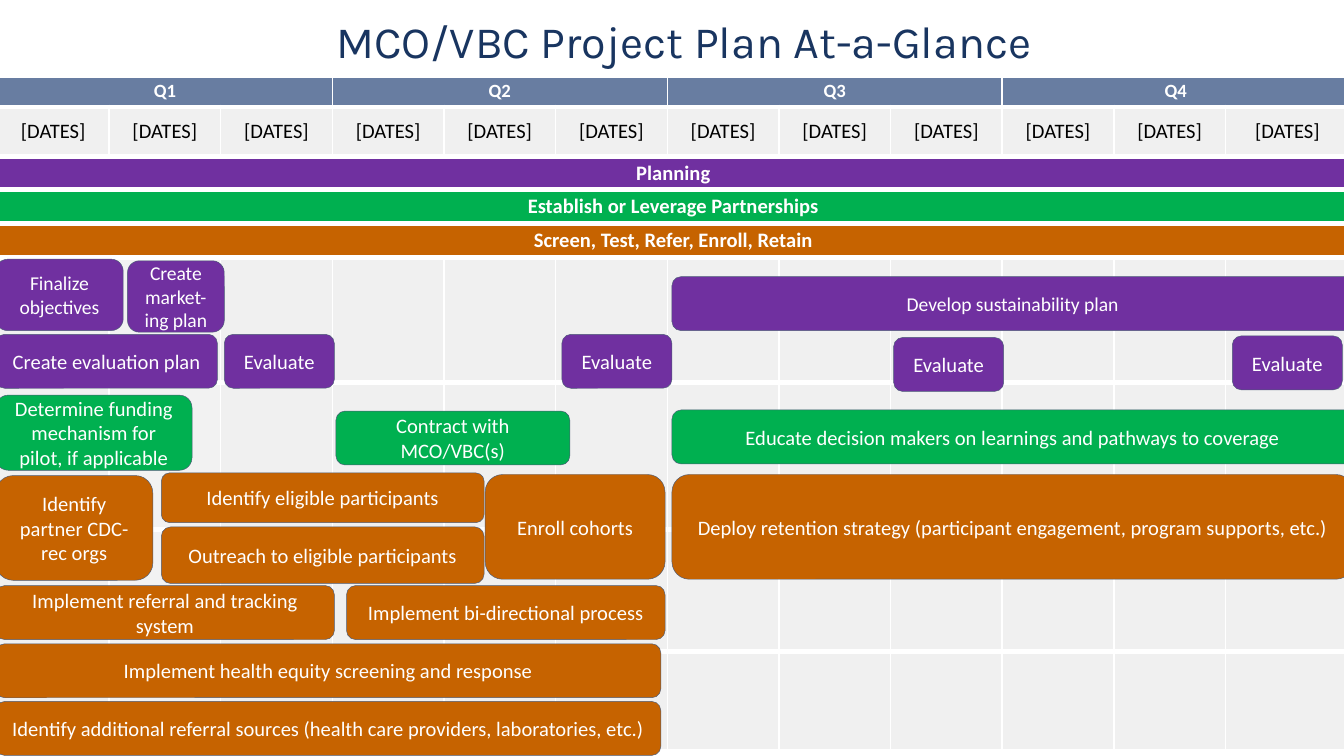
from lxml import etree
from pptx import Presentation
from pptx.dml.color import RGBColor
from pptx.enum import shapes, text
from pptx.oxml import ns
from pptx.util import Cm, Pt

COLORS = {
    "title": "193560", "quarter": "687DA1", "month": "F0F0F0", "second_month": "F2F2F2",
    "outline": "4D5C77", "white": "FFFFFF", "black": "000000",
    "planning": "7030A0", "partnerships": "00B050", "enrollment": "C66300",
}
TITLE = "MCO/VBC Project Plan At-a-Glance"
QUARTERS = ["Q1", "Q2", "Q3", "Q4"]
MONTHS = ["[DATES]"] * 12
PHASES = [
    ("planning", "Planning"),
    ("partnerships", "Establish or Leverage Partnerships"),
    ("enrollment", "Screen, Test, Refer, Enroll, Retain"),
]
START, SECOND_HALF = -0.08, 12.7
HALF_YEAR, EVALUATION, BAR = 12.88, 2.08, 1.02
TASKS = {
    "planning": [
        ("Finalize objectives", START, 4.9, 2.41, 1.35, 10.5),
        ("Create market-\ving plan", 2.41, 4.93, 1.83, 1.35, 10.5),
        ("Develop sustainability plan", SECOND_HALF, 5.23, HALF_YEAR, BAR, 10.5),
        ("Create evaluation plan", START, 6.32, 4.19, BAR, 11),
        ("Evaluate", 4.24, 6.32, EVALUATION, BAR, 11),
        ("Evaluate", 10.62, 6.32, EVALUATION, BAR, 11),
        ("Evaluate", 16.89, 6.38, EVALUATION, BAR, 11),
        ("Evaluate", 23.29, 6.35, EVALUATION, BAR, 11),
    ],
    "partnerships": [
        ("Determine funding mechanism for pilot, if applicable", START, 7.47, 3.71, 1.42, 11),
        ("Contract with MCO/VBC(s)", 6.35, 7.77, 4.42, BAR, 11),
        ("Educate decision makers on learnings and pathways to coverage",
         SECOND_HALF, 7.75, HALF_YEAR, BAR, 11),
    ],
    "enrollment": [
        ("Identify partner CDC-rec orgs", START, 8.99, 2.97, 1.98, 11),
        ("Identify eligible participants", 3.05, 8.94, 6.1, 0.94, 11),
        ("Outreach to eligible participants", 3.05, 9.96, 6.1, 1.07, 11),
        ("Enroll cohorts", 9.17, 8.97, 3.4, 1.98, 11),
        ("Deploy retention strategy (participant engagement, program supports, etc.)",
         SECOND_HALF, 8.97, HALF_YEAR, 1.98, 11),
        ("Implement referral and tracking system", START, 11.07, 6.4, BAR, 11),
        ("Implement bi-directional process", 6.55, 11.07, 6.02, BAR, 11),
        ("Implement health equity screening and response", START, 12.17, 12.57, BAR, 11),
        ("Identify additional referral sources (health care providers, laboratories, etc.)",
         START, 13.26, 12.57, BAR, 11),
    ],
}
MONTH_WIDTHS = [2.11] * 11 + [2.34]
HEADER_ROWS = [0.59, 0.93]
ROADMAP_ROWS = [0.64] * 3 + [2.36, 2.77, 2.31, 1.9]
TABLE_LEFT, HEADER_TOP, ROADMAP_TOP = -0.05, 1.43, 2.95


def rgb(name):
    return RGBColor.from_string(COLORS[name])


def write(frame, words, size, color, bold=False, font="Calibri", align=text.PP_ALIGN.CENTER):
    frame.text = words
    paragraph = frame.paragraphs[0]
    paragraph.alignment = align
    for run in paragraph.runs:
        run.font.name = font
        run.font.size = Pt(size)
        run.font.bold = bold
        run.font.color.rgb = rgb(color)
    return paragraph


def add_border(cell, side, width):
    edge = etree.SubElement(cell._tc.get_or_add_tcPr(), ns.qn(f"a:ln{side}"), w=str(Pt(width)))
    fill = etree.SubElement(edge, ns.qn("a:solidFill"))
    etree.SubElement(fill, ns.qn("a:srgbClr"), val=COLORS["white"])


def add_grid(slide, top, heights, rule):
    frame = slide.shapes.add_table(len(heights), len(MONTH_WIDTHS), Cm(TABLE_LEFT), Cm(top),
                                   Cm(sum(MONTH_WIDTHS)), Cm(sum(heights)))
    grid = frame.table
    grid.first_row = grid.horz_banding = False
    for column, width in zip(grid.columns, MONTH_WIDTHS):
        column.width = Cm(width)
    for row, height in zip(grid.rows, heights):
        row.height = Cm(height)
    for cell in grid.iter_cells():
        for side, width in zip("LRTB", (0.87, 0.87, rule, rule)):
            add_border(cell, side, width)
        cell.margin_left = cell.margin_right = Cm(0.15)
        cell.margin_top = cell.margin_bottom = Cm(0.08)
        cell.vertical_anchor = text.MSO_ANCHOR.MIDDLE
        cell.fill.solid()
        cell.fill.fore_color.rgb = rgb("month")
    return grid


def add_span(grid, row, first, last, words, size, color):
    cell = grid.cell(row, first)
    cell.merge(grid.cell(row, last))
    cell.fill.fore_color.rgb = rgb(color)
    write(cell.text_frame, words, size, "white", bold=True)


def add_roadmap(slide):
    grid = add_grid(slide, ROADMAP_TOP, ROADMAP_ROWS, 3)
    for row, (color, phase) in enumerate(PHASES):
        add_span(grid, row, 0, len(MONTHS) - 1, phase, 11, color)
    for row in range(len(PHASES), len(ROADMAP_ROWS)):
        grid.cell(row, 1).fill.fore_color.rgb = rgb("second_month")


def add_header(slide):
    grid = add_grid(slide, HEADER_TOP, HEADER_ROWS, 2.62)
    months_each = len(MONTHS) // len(QUARTERS)
    for index, quarter in enumerate(QUARTERS):
        first = index * months_each
        add_span(grid, 0, first, first + months_each - 1, quarter, 10, "quarter")
    for column, month in enumerate(MONTHS):
        write(grid.cell(1, column).text_frame, month, 11, "black")


def add_task(slide, color, words, left, top, width, height, size):
    task = slide.shapes.add_shape(shapes.MSO_SHAPE.ROUNDED_RECTANGLE,
                                  Cm(left), Cm(top), Cm(width), Cm(height))
    task.shadow.inherit = False
    task.fill.solid()
    task.fill.fore_color.rgb = rgb(color)
    task.line.color.rgb = rgb("outline")
    task.line.width = Pt(0.25)
    task.text_frame.word_wrap = True
    task.text_frame.vertical_anchor = text.MSO_ANCHOR.MIDDLE
    write(task.text_frame, words, size, "white")


def main():
    deck = Presentation()
    deck.slide_width, deck.slide_height = Cm(25.4), Cm(14.29)
    slide = deck.slides.add_slide(deck.slide_layouts[5])

    title = slide.shapes.title
    title.left, title.top, title.width, title.height = Cm(6.1), Cm(0.18), Cm(16.36), Cm(1.3)
    title.text_frame.auto_size = text.MSO_AUTO_SIZE.NONE
    title.text_frame.vertical_anchor = text.MSO_ANCHOR.MIDDLE
    heading = write(title.text_frame, TITLE, 24, "title", font="Karla", align=text.PP_ALIGN.LEFT)
    heading.line_spacing = 0.9

    add_roadmap(slide)
    for color, tasks in TASKS.items():
        for task in tasks:
            add_task(slide, color, *task)
    add_header(slide)
    deck.save("out.pptx")


if __name__ == "__main__":
    main()
